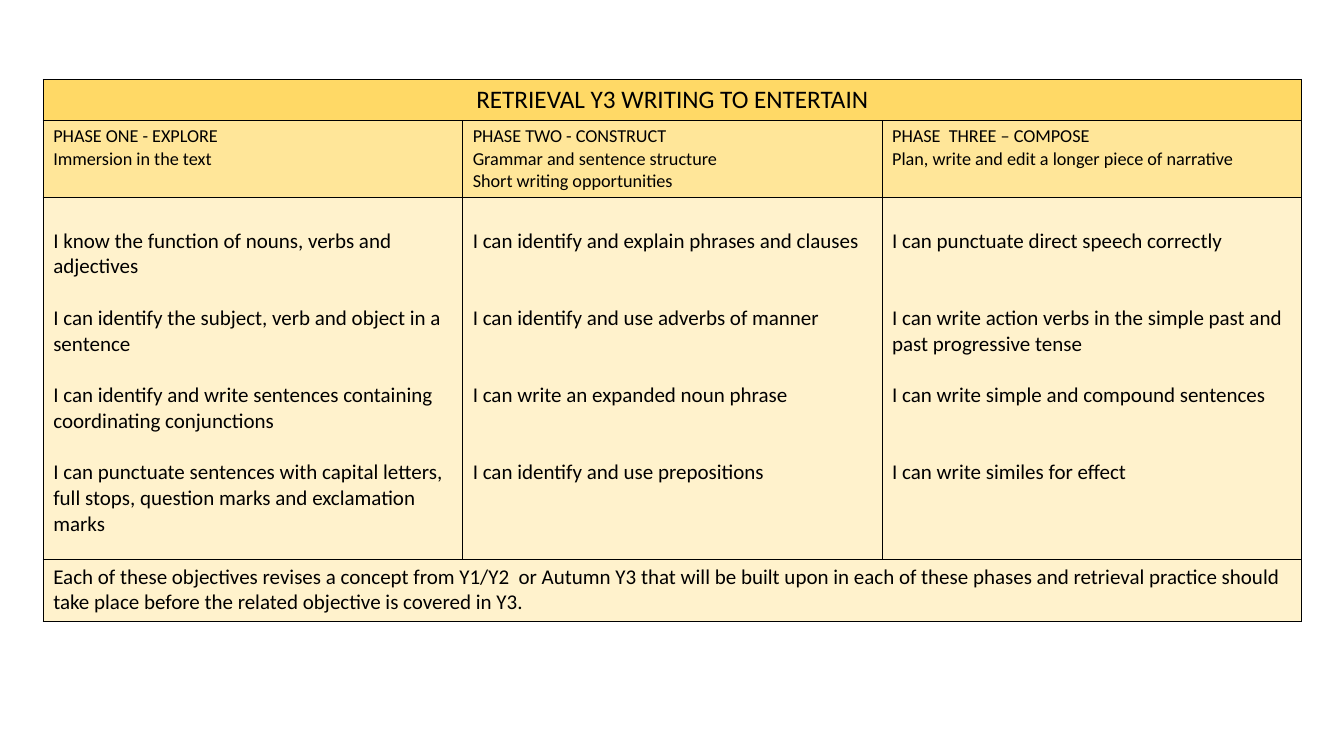
from lxml.etree import SubElement
from pptx import Presentation
from pptx.dml.color import RGBColor
from pptx.enum.text import PP_ALIGN
from pptx.oxml.ns import qn
from pptx.util import Cm, Pt

TITLE = "RETRIEVAL Y3 WRITING TO ENTERTAIN"
# Each phase: heading lines, then objectives with the number of lines each one fills
PHASES = [
    (["PHASE ONE - EXPLORE", "Immersion in the text"],
     [("I know the function of nouns, verbs and adjectives", 2),
      ("I can identify the subject, verb and object in a sentence", 2),
      ("I can identify and write sentences containing coordinating conjunctions", 2),
      ("I can punctuate sentences with capital letters, full stops, question marks "
       "and exclamation marks", 3)]),
    (["PHASE TWO - CONSTRUCT", "Grammar and sentence structure",
      "Short writing opportunities"],
     [("I can identify and explain phrases and clauses", 1),
      ("I can identify and use adverbs of manner", 1),
      ("I can write an expanded noun phrase", 1),
      ("I can identify and use prepositions", 1)]),
    (["PHASE  THREE – COMPOSE", "Plan, write and edit a longer piece of narrative"],
     [("I can punctuate direct speech correctly", 1),
      ("I can write action verbs in the simple past and past progressive tense", 2),
      ("I can write simple and compound sentences", 1),
      ("I can write similes for effect", 1)]),
]
FOOTER = ("Each of these objectives revises a concept from Y1/Y2  or Autumn Y3 that will be "
          "built upon in each of these phases and retrieval practice should take place "
          "before the related objective is covered in Y3.")

FONT, BLACK = "Calibri", "000000"
GOLD, YELLOW, CREAM = "FFD966", "FFE699", "FFF2CC"
LEFT, TOP, COLUMN_WIDTH = 1.09, 2.0, 10.57
ROW_HEIGHTS = [1.04, 1.91, 9.12, 1.56]
LINE_PITCH = 18.4  # points, for 15 pt text
LINES_PER_OBJECTIVE = 3


def color(hex_string):
    return RGBColor.from_string(hex_string)


def add_borders(cell):
    properties = cell._tc.get_or_add_tcPr()
    for side in ("lnL", "lnR", "lnT", "lnB"):
        line = SubElement(properties, qn(f"a:{side}"), w=str(Pt(1)))
        fill = SubElement(line, qn("a:solidFill"))
        SubElement(fill, qn("a:srgbClr"), val=BLACK)


def write_cell(cell, lines, size, align=PP_ALIGN.LEFT, gaps=None):
    """Write one paragraph per line; gaps gives the points of space after each."""
    text_frame = cell.text_frame
    text_frame.text = "\n".join(lines)
    for paragraph, gap in zip(text_frame.paragraphs, gaps or [0] * len(lines)):
        paragraph.alignment = align
        paragraph.space_after = Pt(gap)
        font = paragraph.runs[0].font
        for name, value in {"name": FONT, "size": Pt(size), "bold": False}.items():
            setattr(font, name, value)
        font.color.rgb = color(BLACK)


def main():
    presentation = Presentation()
    presentation.slide_width, presentation.slide_height = Cm(33.87), Cm(19.05)
    slide = presentation.slides.add_slide(presentation.slide_layouts[6])
    columns = len(PHASES)
    table = slide.shapes.add_table(
        len(ROW_HEIGHTS), columns, Cm(LEFT), Cm(TOP),
        Cm(COLUMN_WIDTH * columns), Cm(sum(ROW_HEIGHTS))).table
    table.first_row = table.horz_banding = False

    for column in table.columns:
        column.width = Cm(COLUMN_WIDTH)
    row_fills = [GOLD, YELLOW, CREAM, CREAM]
    for index, (height, fill) in enumerate(zip(ROW_HEIGHTS, row_fills)):
        table.rows[index].height = Cm(height)
        for cell in table.rows[index].cells:
            add_borders(cell)
            cell.fill.solid()
            cell.fill.fore_color.rgb = color(fill)

    for row in (0, 3):
        table.cell(row, 0).merge(table.cell(row, columns - 1))
    write_cell(table.cell(0, 0), [TITLE], 18, PP_ALIGN.CENTER)
    write_cell(table.cell(3, 0), [FOOTER], 15)

    for column, (heading, objectives) in enumerate(PHASES):
        write_cell(table.cell(1, column), heading, 13)
        gaps = [(LINES_PER_OBJECTIVE - lines) * LINE_PITCH for _, lines in objectives]
        gaps[-1] = 0
        objectives_cell = table.cell(2, column)
        objectives_cell.margin_top = Cm(0.78)
        write_cell(objectives_cell, [text for text, _ in objectives], 15, gaps=gaps)

    presentation.save("out.pptx")


if __name__ == "__main__":
    main()
